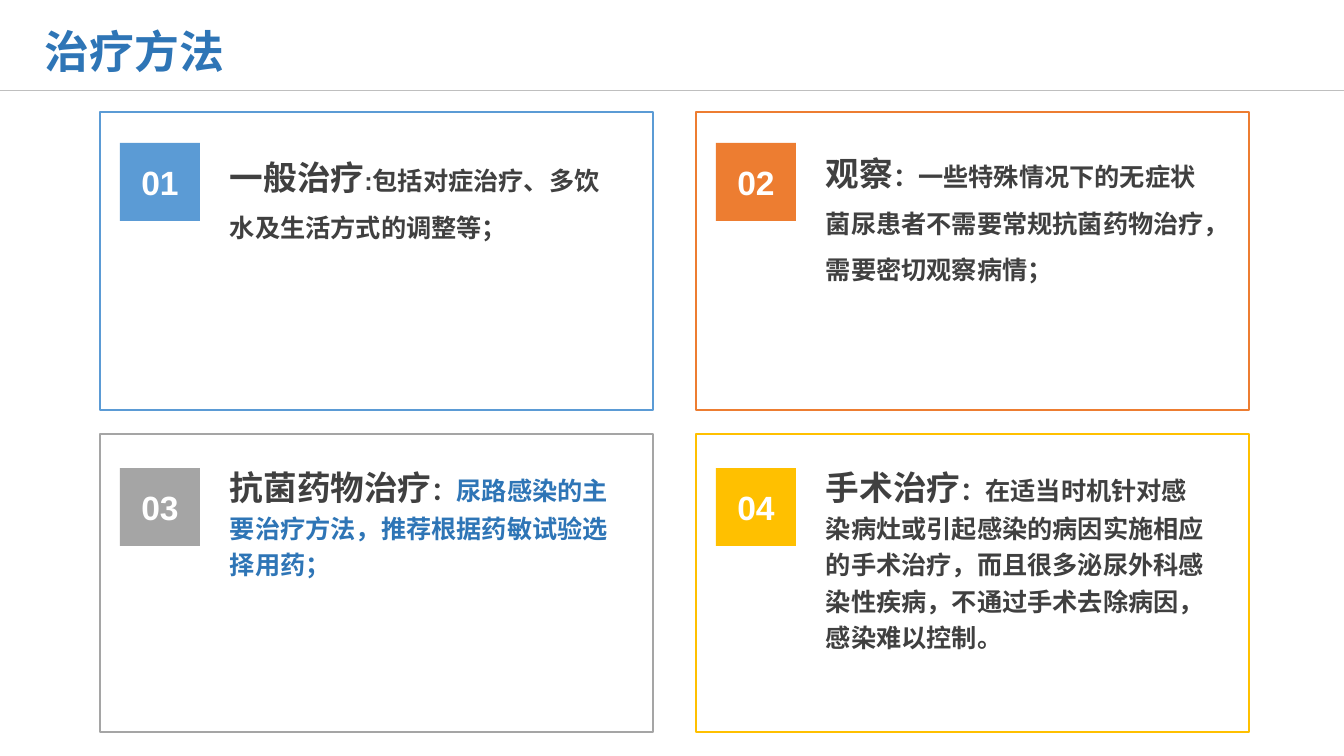
"""Build the slide on treatment methods: a title and four numbered cards."""
from lxml.etree import SubElement
from pptx import Presentation
from pptx.dml.color import RGBColor
from pptx.enum.shapes import MSO_CONNECTOR, MSO_SHAPE
from pptx.enum.text import PP_ALIGN
from pptx.oxml.ns import qn
from pptx.util import Pt

PX = 914400 / 100.8
CJK = "Noto Sans CJK SC"
BLUE = RGBColor(0x5B, 0x9B, 0xD5)
ORANGE = RGBColor(0xED, 0x7D, 0x31)
GRAY = RGBColor(0xA5, 0xA5, 0xA5)
GOLD = RGBColor(0xFF, 0xC0, 0x00)
NAVY = RGBColor(0x2E, 0x75, 0xB6)
DARK = RGBColor(0x40, 0x40, 0x40)
WHITE = RGBColor(0xFF, 0xFF, 0xFF)
RULE = RGBColor(0xBF, 0xBF, 0xBF)


def px(*nums):
    return [round(n * PX) for n in nums]


def write(box, runs, space=1.0, align=PP_ALIGN.LEFT, font="Arial", wrap=True):
    frame = slide.shapes.add_textbox(*px(*box)).text_frame
    frame.word_wrap = wrap
    para = frame.paragraphs[0]
    para.line_spacing = space
    para.alignment = align
    for text, size, color in runs:
        run = para.add_run()
        run.text = text
        run.font.size = Pt(size)
        run.font.bold = True
        run.font.color.rgb = color
        run.font.name = font
        east = SubElement(run.font._element, qn("a:ea"))
        east.set("typeface", CJK)


deck = Presentation()
deck.slide_width, deck.slide_height = px(1344, 756)
slide = deck.slides.add_slide(deck.slide_layouts[6])

rule = slide.shapes.add_connector(MSO_CONNECTOR.STRAIGHT, *px(0, 90, 1344, 90))
rule.line.color.rgb = RULE
rule.line.width = Pt(0.5)
SubElement(rule._element.spPr, qn("a:effectLst"))
write((35, 19, 260, 67), [("治疗方法", 32, NAVY)], font=CJK, wrap=False)

cards = [
    (BLUE, 132, 1.5, [
        ("一般治疗", 24, DARK),
        (":包括对症治疗、多饮水及生活方式的调整等；", 18, DARK)]),
    (ORANGE, 128, 1.5, [
        ("观察", 24, DARK),
        ("：一些特殊情况下的无症状菌尿患者不需要常规抗菌药物治疗，需要密切观察病情；", 18, DARK)]),
    (GRAY, 454, 1.2, [
        ("抗菌药物治疗", 24, DARK),
        ("：", 18, DARK),
        ("尿路感染的主要治疗方法，推荐根据药敏试验选择用药；", 18, NAVY)]),
    (GOLD, 454, 1.2, [
        ("手术治疗", 24, DARK),
        ("：在适当时机针对感染病灶或引起感染的病因实施相应的手术治疗，"
         "而且很多泌尿外科感染性疾病，不通过手术去除病因，感染难以控制。", 18, DARK)]),
]

for i, (color, top, space, runs) in enumerate(cards):
    row, col = divmod(i, 2)
    left = 100 + 596 * col
    card = slide.shapes.add_shape(
        MSO_SHAPE.ROUND_2_DIAG_RECTANGLE, *px(left, 112 + 322 * row, 553, 298))
    card.adjustments[0] = card.adjustments[1] = 0
    card.shadow.inherit = False
    card.fill.background()
    card.line.color.rgb = color
    card.line.width = Pt(2)
    write((left + 120, top, 399, 262), runs, space)

    y = 143 + 325 * row
    badge = slide.shapes.add_shape(MSO_SHAPE.RECTANGLE, *px(left + 20, y, 80, 78))
    badge.shadow.inherit = False
    badge.fill.solid()
    badge.fill.fore_color.rgb = color
    badge.line.fill.background()
    write((left + 23, y + 6, 74, 70), [(f"{i + 1:02}", 24, WHITE)], 1.2, PP_ALIGN.CENTER)

deck.save("out.pptx")
